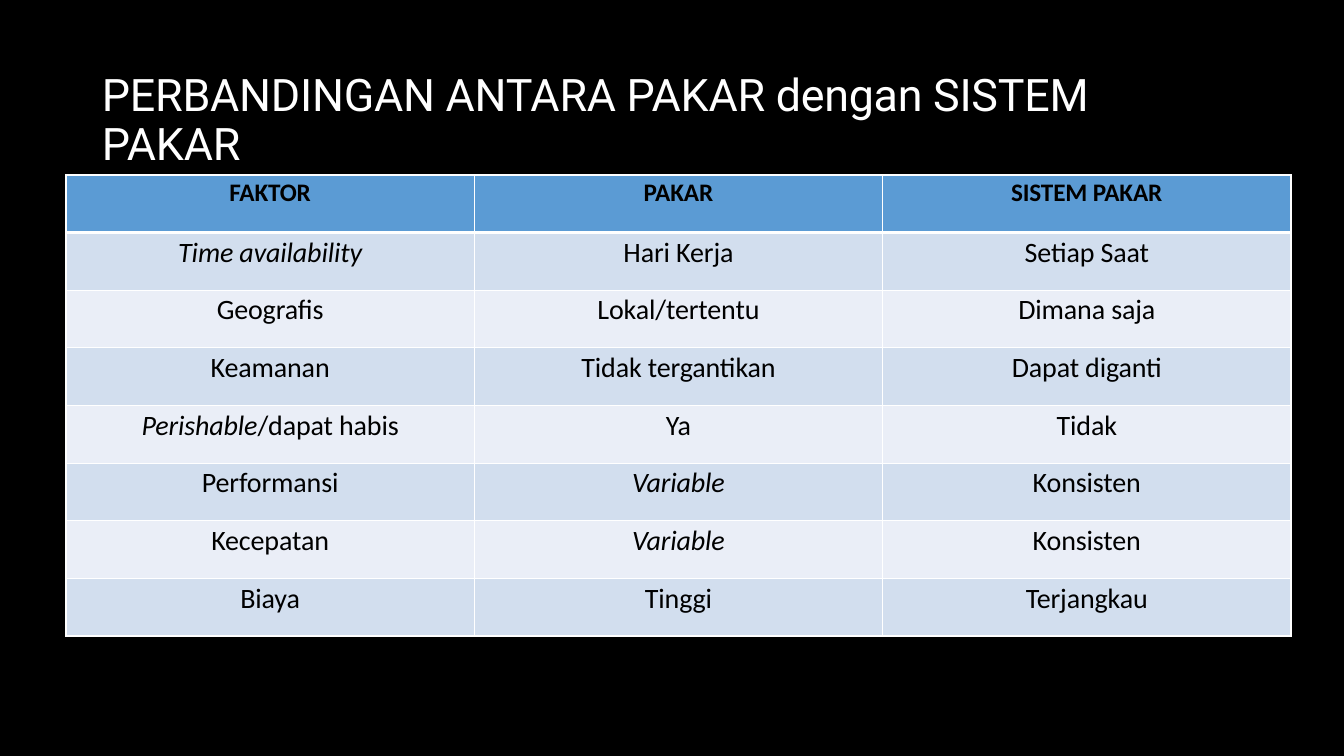
"""Build a slide comparing human experts with expert systems."""
from lxml import etree
from pptx import Presentation
from pptx.dml.color import RGBColor
from pptx.enum import text
from pptx.oxml import ns
from pptx.util import Pt

PX = 914400 / 100.8
THEME = {
    "background": "000000", "title": "FFFFFF", "body": "000000", "border": "FFFFFF",
    "header": "5B9BD4", "bands": ("D2DEEE", "EAEEF7"),
    "title_font": "Roboto", "table_font": "Calibri",
    "title_size": 32, "header_size": 18, "body_size": 20,
}


def px(length):
    return round(length * PX)


def write(frame, content, *, font, size, color, bold=False, align=text.PP_ALIGN.LEFT,
          before=0, line=None, tracking=-10):
    """Write content into a frame, with *asterisks* around italic parts."""
    paragraph = frame.paragraphs[0]
    paragraph.alignment = align
    paragraph.space_before = Pt(before)
    if line:
        paragraph.line_spacing = Pt(line)
    for index, part in enumerate(content.split("*")):
        if part:
            run = paragraph.add_run()
            run.text = part
            run.font.name = font
            run.font.size = Pt(size)
            run.font.bold = bold
            run.font.italic = index % 2 == 1
            run.font.color.rgb = RGBColor.from_string(color)
            run.font._element.set("spc", str(tracking))


prs = Presentation()
prs.slide_width, prs.slide_height = px(1344), px(756)
slide = prs.slides.add_slide(prs.slide_layouts[6])
slide.background.fill.solid()
slide.background.fill.fore_color.rgb = RGBColor.from_string(THEME["background"])

title = slide.shapes.add_textbox(px(101), px(65), px(1049), px(105)).text_frame
title.word_wrap = True
title.vertical_anchor = text.MSO_ANCHOR.MIDDLE
title.margin_left = px(1)
title.margin_top = px(7)
title.margin_right = title.margin_bottom = 0
write(title, "PERBANDINGAN ANTARA PAKAR dengan SISTEM PAKAR", font=THEME["title_font"],
      size=THEME["title_size"], color=THEME["title"], before=5.3, line=34.6, tracking=-20)

comparison = [
    ("FAKTOR", "PAKAR", "SISTEM PAKAR"),
    ("*Time availability*", "Hari Kerja", "Setiap Saat"),
    ("Geografis", "Lokal/tertentu", "Dimana saja"),
    ("Keamanan", "Tidak tergantikan", "Dapat diganti"),
    ("*Perishable*/dapat habis", "Ya", "Tidak"),
    ("Performansi", "*Variable*", "Konsisten"),
    ("Kecepatan", "*Variable*", "Konsisten"),
    ("Biaya", "Tinggi", "Terjangkau"),
]
table = slide.shapes.add_table(len(comparison), 3, px(66), px(175), px(1225), px(461)).table

for row, factors in enumerate(comparison):
    header = row == 0
    fill = THEME["header"] if header else THEME["bands"][(row - 1) % 2]
    borders = {"lnL": 1, "lnR": 1, "lnT": 3 if row == 1 else 1, "lnB": 3 if header else 1}
    for column, factor in enumerate(factors):
        cell = table.cell(row, column)
        cell.margin_left = cell.margin_right = cell.margin_bottom = 0
        cell.margin_top = px(3)
        properties = cell._tc.get_or_add_tcPr()
        for side, width in borders.items():
            edge = etree.SubElement(properties, ns.qn(f"a:{side}"), w=str(Pt(width)))
            solid = etree.SubElement(edge, ns.qn("a:solidFill"))
            etree.SubElement(solid, ns.qn("a:srgbClr"), val=THEME["border"])
        cell.fill.solid()
        cell.fill.fore_color.rgb = RGBColor.from_string(fill)
        write(cell.text_frame, factor, font=THEME["table_font"], color=THEME["body"],
              size=THEME["header_size"] if header else THEME["body_size"], bold=header,
              align=text.PP_ALIGN.CENTER, before=2.5 if header else 2.3)

prs.save("out.pptx")
